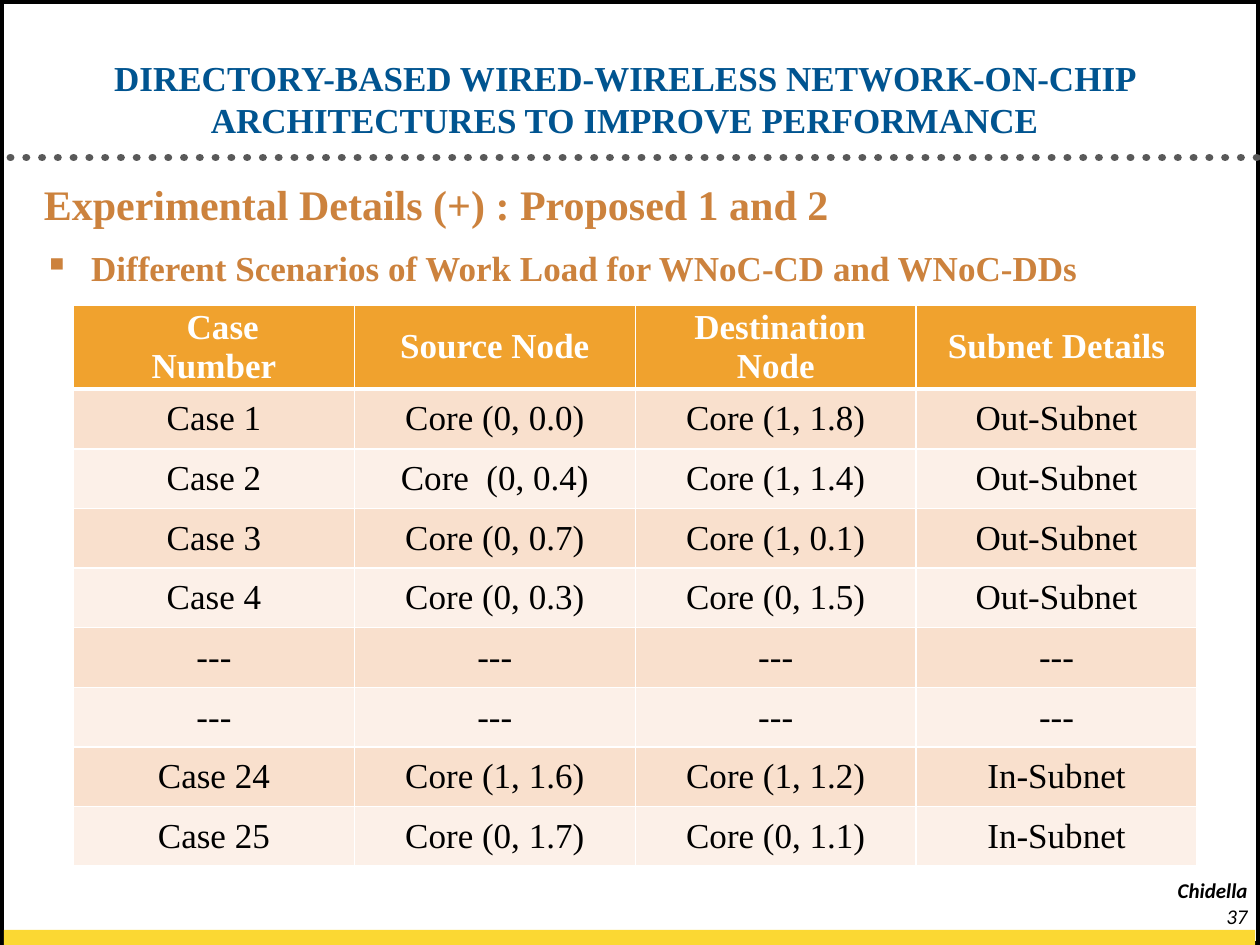
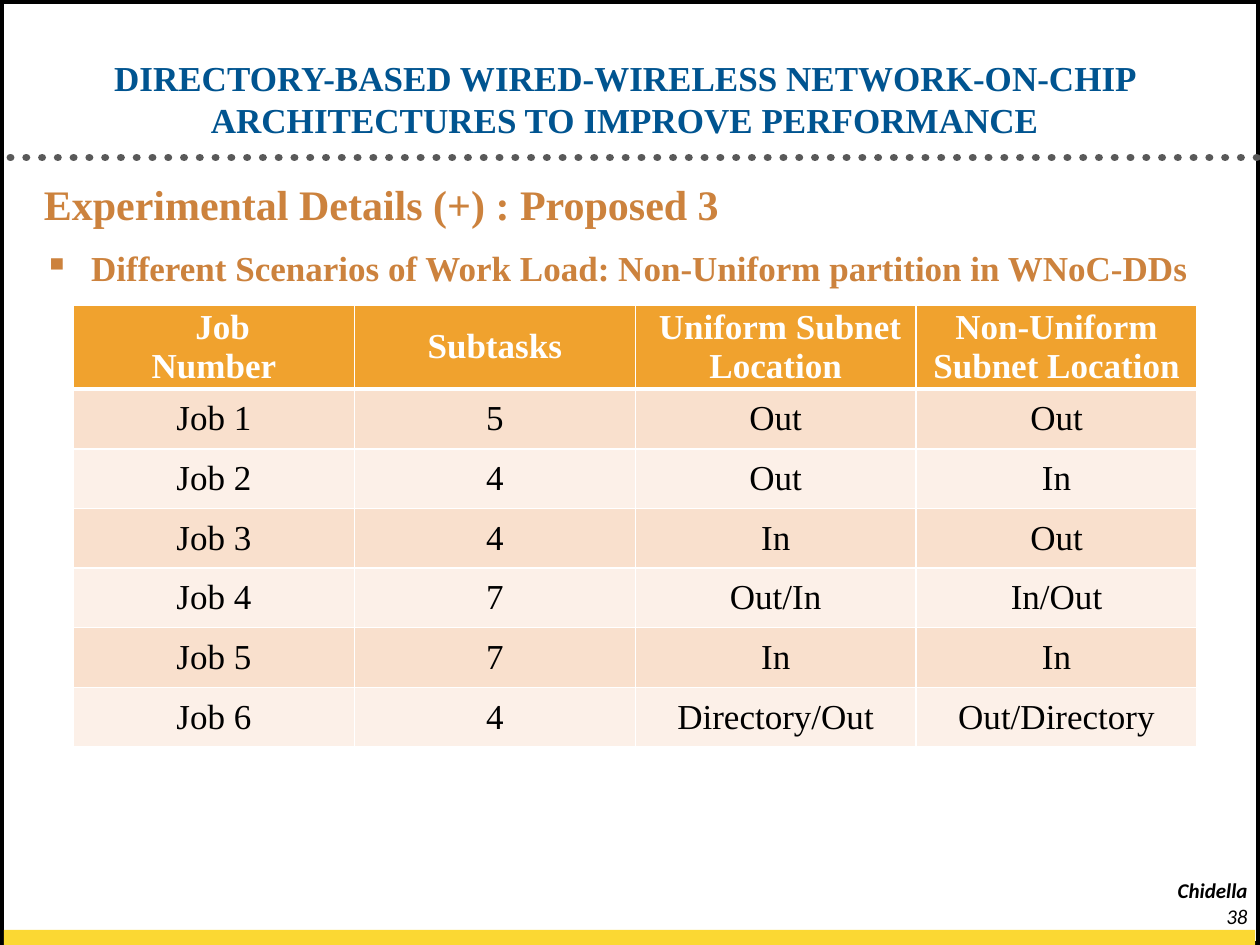
import pptx
import pptx.util
import pptx.dml.color
import pptx.enum.dml
import pptx.enum.shapes
import pptx.enum.text
import pptx.oxml.ns
import lxml.etree

Pt = pptx.util.Pt
RGB = pptx.dml.color.RGBColor.from_string
PP_ALIGN = pptx.enum.text.PP_ALIGN
ANCHOR = pptx.enum.text.MSO_ANCHOR
SHAPE = pptx.enum.shapes.MSO_SHAPE
qn = pptx.oxml.ns.qn

COLORS = {
    "white": "FFFFFF", "black": "000000", "title": "005490", "heading": "CC823D",
    "dots": "595959", "band": "FBD833", "header": "F0A22E",
    "odd": "F9E0CD", "even": "FCF0E8",
}
SERIF, SANS = "Times New Roman", "Calibri"
TITLE = ("DIRECTORY-BASED WIRED-WIRELESS NETWORK-ON-CHIP "
         "ARCHITECTURES TO IMPROVE PERFORMANCE")
AUTHOR = "Chidella"
HEADER_INDENTS = [10, 0, 5, 0]
COL_WIDTH, HEADER_HEIGHT, ROW_HEIGHT = 160.5, 48.2, 34.1

SLIDES = [
    {
        "number": 37,
        "heading": "Experimental Details (+) : Proposed 1 and 2",
        "bullet": "Different Scenarios of Work Load for WNoC-CD and WNoC-DDs",
        "rows": [
            ["Case\nNumber", "Source Node", "Destination Node", "Subnet Details"],
            ["Case 1", "Core (0, 0.0)", "Core (1, 1.8)", "Out-Subnet"],
            ["Case 2", "Core  (0, 0.4)", "Core (1, 1.4)", "Out-Subnet"],
            ["Case 3", "Core (0, 0.7)", "Core (1, 0.1)", "Out-Subnet"],
            ["Case 4", "Core (0, 0.3)", "Core (0, 1.5)", "Out-Subnet"],
            ["---"] * 4,
            ["---"] * 4,
            ["Case 24", "Core (1, 1.6)", "Core (1, 1.2)", "In-Subnet"],
            ["Case 25", "Core (0, 1.7)", "Core (0, 1.1)", "In-Subnet"],
        ],
    },
    {
        "number": 38,
        "heading": "Experimental Details (+) : Proposed 3",
        "bullet": "Different Scenarios of Work Load: Non-Uniform partition in WNoC-DDs",
        "rows": [
            ["Job\nNumber", "Subtasks", "Uniform Subnet Location",
             "Non-Uniform Subnet Location"],
            ["Job 1", "5", "Out", "Out"],
            ["Job 2", "4", "Out", "In"],
            ["Job 3", "4", "In", "Out"],
            ["Job 4", "7", "Out/In", "In/Out"],
            ["Job 5", "7", "In", "In"],
            ["Job 6", "4", "Directory/Out", "Out/Directory"],
        ],
    },
]


def write(tf, text, size, font, color, align, bold=False, italic=False):
    tf.word_wrap = True
    tf.text = text
    for p in tf.paragraphs:
        p.alignment = align
        for r in p.runs:
            r.font.size = Pt(size)
            r.font.name = font
            r.font.bold = bold
            r.font.italic = italic
            r.font.color.rgb = RGB(COLORS[color])


def add_border(cell, side, width):
    ln = lxml.etree.SubElement(cell._tc.get_or_add_tcPr(), qn("a:" + side), w=str(Pt(width)))
    fill = lxml.etree.SubElement(ln, qn("a:solidFill"))
    lxml.etree.SubElement(fill, qn("a:srgbClr"), val=COLORS["white"])


prs = pptx.Presentation()
prs.slide_width, prs.slide_height = Pt(720), Pt(540)

for page in SLIDES:
    s = prs.slides.add_slide(prs.slide_layouts[6])

    frame = s.shapes.add_shape(SHAPE.RECTANGLE, 0, 0, Pt(720), Pt(540))
    frame.line.color.rgb = RGB(COLORS["black"])
    frame.line.width = Pt(4.5)
    band = s.shapes.add_shape(SHAPE.RECTANGLE, Pt(2.2), Pt(531.4), Pt(715), Pt(8.6))
    band.line.fill.background()
    for sp, color in ((frame, "white"), (band, "band")):
        sp.shadow.inherit = False
        sp.fill.solid()
        sp.fill.fore_color.rgb = RGB(COLORS[color])

    rule = s.shapes.add_connector(pptx.enum.shapes.MSO_CONNECTOR.STRAIGHT,
                                  Pt(6), Pt(90), Pt(720), Pt(90))
    rule.line.color.rgb = RGB(COLORS["dots"])
    rule.line.width = Pt(4.5)
    rule.line.dash_style = pptx.enum.dml.MSO_LINE.ROUND_DOT
    rule.line._get_or_add_ln().set("cap", "rnd")
    lxml.etree.SubElement(rule._element.spPr, qn("a:effectLst"))

    for top, text, bold in ((498.2, AUTHOR, True), (512.6, str(page["number"]), False)):
        footer = s.shapes.add_textbox(Pt(653.8), Pt(top), Pt(66.2), Pt(18.7))
        write(footer.text_frame, text, 12, SANS, "black", PP_ALIGN.RIGHT, bold, True)

    title = s.shapes.add_textbox(Pt(18), Pt(30), Pt(678), Pt(54))
    title.text_frame.vertical_anchor = ANCHOR.BOTTOM
    write(title.text_frame, TITLE, 20, SERIF, "title", PP_ALIGN.CENTER, True)

    body = s.shapes.add_textbox(Pt(18), Pt(102), Pt(684), Pt(360))
    write(body.text_frame, page["heading"] + "\n" + page["bullet"], 24, SERIF,
          "heading", PP_ALIGN.LEFT, True)
    heading, bullet = body.text_frame.paragraphs
    for p in (heading, bullet):
        p.line_spacing = 0.9
        p.space_after = Pt(6)
    bullet.space_before = Pt(6)
    bullet.runs[0].font.size = Pt(20)
    pPr = bullet._p.get_or_add_pPr()
    pPr.set("marL", str(Pt(27)))
    pPr.set("indent", str(-Pt(27)))
    buClr = lxml.etree.SubElement(pPr, qn("a:buClr"))
    lxml.etree.SubElement(buClr, qn("a:srgbClr"), val=COLORS["heading"])
    lxml.etree.SubElement(pPr, qn("a:buChar"), char="▪")

    rows = page["rows"]
    cols = len(rows[0])
    height = HEADER_HEIGHT + ROW_HEIGHT * (len(rows) - 1)
    table = s.shapes.add_table(len(rows), cols, Pt(42), Pt(174.2),
                               Pt(COL_WIDTH * cols), Pt(height)).table
    for col in table.columns:
        col.width = Pt(COL_WIDTH)
    for i, row in enumerate(rows):
        is_header = i == 0
        table.rows[i].height = Pt(HEADER_HEIGHT if is_header else ROW_HEIGHT)
        fill = "header" if is_header else "odd" if i % 2 else "even"
        for j, text in enumerate(row):
            cell = table.cell(i, j)
            cell.vertical_anchor = ANCHOR.MIDDLE
            cell.margin_left = cell.margin_right = Pt(5.6)
            cell.margin_top = cell.margin_bottom = 0
            write(cell.text_frame, text, 20, SERIF, "white" if is_header else "black",
                  PP_ALIGN.CENTER, is_header)
            if is_header and HEADER_INDENTS[j]:
                pPr = cell.text_frame.paragraphs[0]._p.get_or_add_pPr()
                pPr.set("indent", str(Pt(HEADER_INDENTS[j])))
            for side in ("lnL", "lnR", "lnT", "lnB"):
                thick = (is_header and side == "lnB") or (i == 1 and side == "lnT")
                add_border(cell, side, 3 if thick else 1)
            cell.fill.solid()
            cell.fill.fore_color.rgb = RGB(COLORS[fill])

prs.save("out.pptx")
